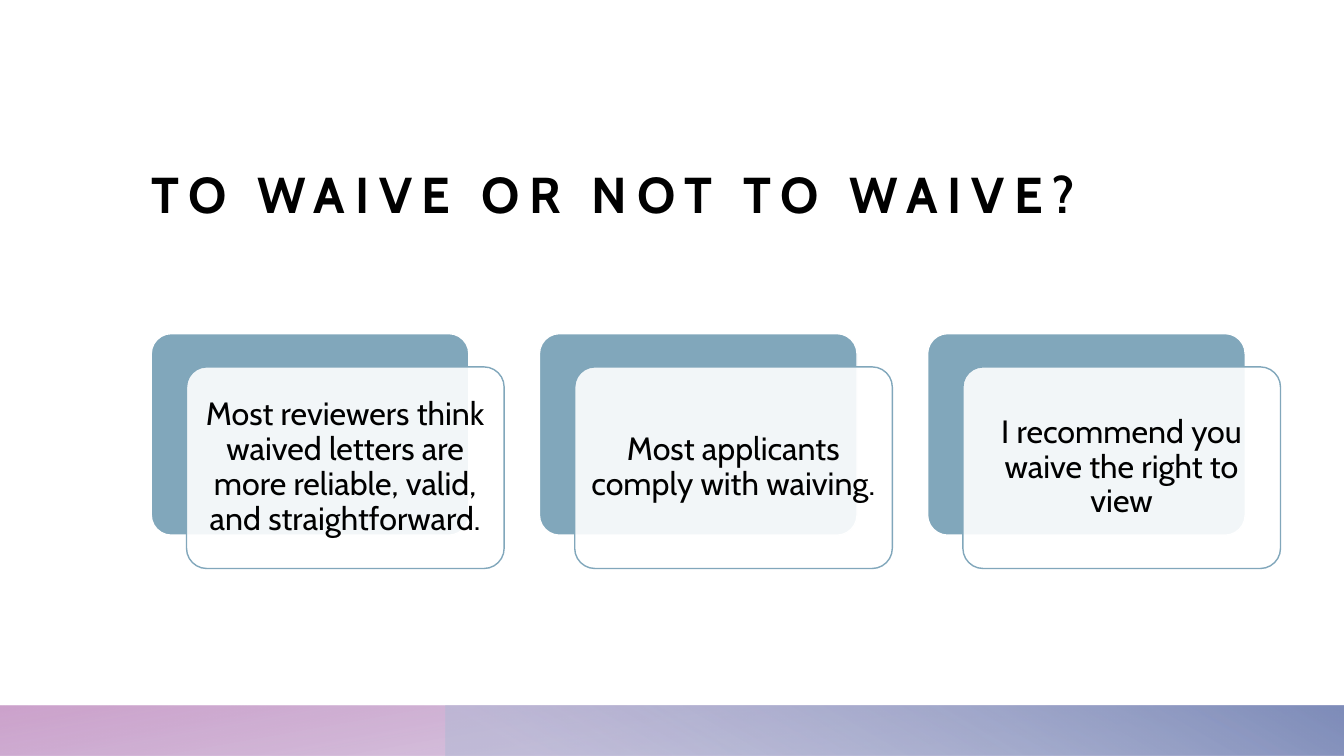
from pptx import Presentation
from pptx.dml.color import RGBColor as RGB
from pptx.enum.shapes import MSO_SHAPE as Kind
from pptx.enum.text import MSO_ANCHOR as Anchor, PP_ALIGN as Align
from pptx.oxml.ns import qn
from pptx.util import Inches as In, Pt
from lxml.etree import SubElement as Sub

HUES = {"ink": "000000", "white": "FFFFFF", "steel": "81A7BB",
        "plum": "A27FBA", "pink": "C492C3", "mist": "B2BBD6", "blue": "7F8DBA"}


def write(shape, text, size, anchor, align=Align.LEFT, inset=0.0,
          bold=False, track=0, lead=1.0):
    frame = shape.text_frame
    frame.word_wrap = True
    frame.vertical_anchor = anchor
    frame.margin_left = frame.margin_right = In(inset)
    frame.margin_top = frame.margin_bottom = In(inset)
    para = frame.paragraphs[0]
    para.alignment, para.line_spacing = align, lead
    run = para.add_run()
    run.text = text
    font = run.font
    font.name, font.size, font.bold = "Cabin", Pt(size), bold
    font.color.rgb = RGB.from_string(HUES["ink"])
    if track:
        run._r.get_or_add_rPr().set("spc", str(track * 100))


def block(kind, x, y, w, h, stops, angle=0, line=None):
    """Add a shape; stops are (hue, place, opacity in percent)."""
    shape = slide.shapes.add_shape(kind, In(x), In(y), In(w), In(h))
    shape.shadow.inherit = False
    fill = shape.fill
    if len(stops) == 1:
        fill.solid()
        fill.fore_color.rgb = RGB.from_string(HUES[stops[0][0]])
    else:
        fill.gradient()
        fill.gradient_angle = angle
        for stop, (hue, place, _) in zip(fill.gradient_stops, stops):
            stop.position = place
            stop.color.rgb = RGB.from_string(HUES[hue])
    tints = list(shape._element.spPr.iter(qn("a:srgbClr")))
    for tint, (_, _, alpha) in zip(tints, stops):
        if alpha < 100:
            Sub(tint, qn("a:alpha")).set("val", str(alpha * 1000))
    if line:
        shape.line.color.rgb = RGB.from_string(HUES[line])
        shape.line.width = Pt(1)
    else:
        shape.line.fill.background()
    return shape


deck = Presentation()
wide, high = 13.33, 7.5
deck.slide_width, deck.slide_height = In(wide), In(high)
slide = deck.slides.add_slide(deck.slide_layouts[6])

# Footer bands: the second covers the right two thirds
band = high / 15
third = 4.42
block(Kind.RECTANGLE, 0, high - band, wide, band,
      [("plum", 0.14, 28), ("pink", 1, 85)], angle=100)
block(Kind.RECTANGLE, third, high - band, wide - third, band,
      [("mist", 0.09, 55), ("blue", 0.99, 100)], angle=60)

# Title
left = 1.5
title = slide.shapes.add_textbox(In(left), In(0.87), In(11.2), In(1.35))
write(title, "TO WAIVE OR NOT TO WAIVE?", 36, Anchor.BOTTOM, bold=True, track=7)

# Three cards, each with a solid back and a pale front
points = ["Most reviewers think waived letters are more reliable, valid, "
          "and straightforward.",
          "Most applicants comply with waiving.",
          "I recommend you waive the right to view"]
top, step, card_w, card_h = 3.31, 3.85, 3.15, 2
shift_x, shift_y = 0.35, 0.33
for col, point in enumerate(points):
    x = left + col * step
    back = block(Kind.ROUNDED_RECTANGLE, x, top, card_w, card_h,
                 [("steel", 0, 100)], line="white")
    front = block(Kind.ROUNDED_RECTANGLE, x + shift_x, top + shift_y,
                  card_w, card_h, [("white", 0, 90)], line="steel")
    for card in (back, front):
        card.adjustments[0] = 0.1
    write(front, point, 23, Anchor.MIDDLE, align=Align.CENTER,
          inset=0.1, lead=0.9)

deck.save("out.pptx")
